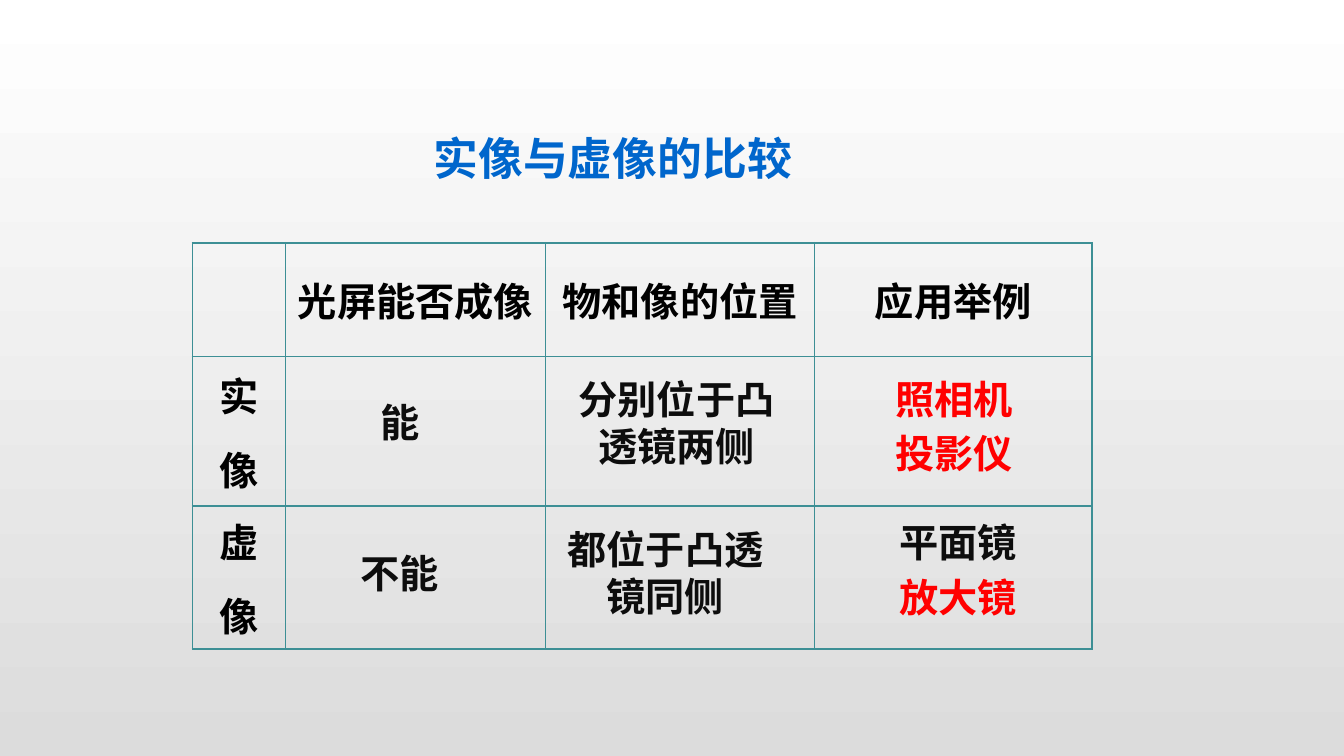
from dataclasses import dataclass

from lxml.etree import SubElement
from pptx import Presentation
from pptx.dml.color import RGBColor
from pptx.enum.text import MSO_ANCHOR, MSO_AUTO_SIZE, PP_ALIGN
from pptx.oxml.ns import qn
from pptx.slide import Slide
from pptx.table import _Cell
from pptx.text.text import TextFrame, _Paragraph
from pptx.util import Inches, Pt


@dataclass(frozen=True)
class Theme:
    font: str = "Times New Roman"
    title_size: float = 32
    text_size: float = 28
    title: str = "0066CC"
    heading: str = "000000"
    body: str = "0D0D0D"
    accent: str = "FF0000"
    border: str = "3D8F95"
    background: tuple[str, str] = ("FFFFFF", "DCDCDC")
    outer_width: float = 1.5
    inner_width: float = 1
    line_gap: float = 5.6
    label_gap: float = 12.5


THEME = Theme()


@dataclass(frozen=True)
class Line:
    text: str
    color: str = THEME.body


@dataclass(frozen=True)
class Answer:
    left: float
    top: float
    width: float
    height: float
    lines: tuple[Line, ...]


TITLE = "实像与虚像的比较"
COLUMN_WIDTHS = (0.92, 2.58, 2.67, 2.75)
ROW_HEIGHTS = (1.13, 1.48, 1.42)
TABLE_LEFT, TABLE_TOP = 1.91, 2.41
HEADINGS = {
    (0, 1): "光屏能否成像",
    (0, 2): "物和像的位置",
    (0, 3): "应用举例",
    (1, 0): "实像",
    (2, 0): "虚像",
}
ANSWERS = (
    Answer(3.09, 3.9, 1.75, 0.57, (Line("能"),)),
    Answer(2.8, 5.4, 2.33, 0.57, (Line("不能"),)),
    Answer(5.53, 3.67, 2.36, 1.03, (Line("分别位于凸透镜两侧"),)),
    Answer(5.53, 5.16, 2.14, 1.03, (Line("都位于凸透镜同侧"),)),
    Answer(8.13, 3.67, 2.67, 1.13,
           (Line("照相机", THEME.accent), Line("投影仪", THEME.accent))),
    Answer(8.13, 5.09, 2.75, 1.13,
           (Line("平面镜"), Line("放大镜", THEME.accent))),
)


def add_span(para: _Paragraph, line: Line, size: float) -> None:
    span = para.add_run()
    span.text = line.text
    span.font.name = THEME.font
    span.font.size = Pt(size)
    span.font.bold = True
    span.font.color.rgb = RGBColor.from_string(line.color)


def write_centred(frame: TextFrame, lines: tuple[Line, ...], gap: float) -> None:
    for index, line in enumerate(lines):
        para = frame.add_paragraph() if index else frame.paragraphs[0]
        para.alignment = PP_ALIGN.CENTER
        para.space_before = Pt(gap if index else 0)
        add_span(para, line, THEME.text_size)


def set_borders(cell: _Cell, outer_edges: dict[str, bool]) -> None:
    """Draw every edge of the cell, thicker where it lies on the table's rim."""
    properties = cell._tc.get_or_add_tcPr()
    for position, (tag, is_outer) in enumerate(outer_edges.items()):
        width = THEME.outer_width if is_outer else THEME.inner_width
        edge = SubElement(properties, qn(f"a:{tag}"), w=str(Pt(width)))
        fill = SubElement(edge, qn("a:solidFill"))
        SubElement(fill, qn("a:srgbClr"), val=THEME.border)
        properties.insert(position, edge)


def paint_background(page: Slide) -> None:
    fill = page.background.fill
    fill.gradient()
    fill.gradient_angle = 270
    for stop, color in zip(fill.gradient_stops, THEME.background):
        stop.color.rgb = RGBColor.from_string(color)


def add_title(page: Slide) -> None:
    title = page.shapes.title
    title.left, title.top = Inches(4.2), Inches(1.25)
    title.width, title.height = Inches(4.43), Inches(0.64)
    frame = title.text_frame
    frame.vertical_anchor = MSO_ANCHOR.TOP
    frame.auto_size = MSO_AUTO_SIZE.SHAPE_TO_FIT_TEXT
    para = frame.paragraphs[0]
    para.alignment = PP_ALIGN.LEFT
    add_span(para, Line(TITLE, THEME.title), THEME.title_size)


def add_comparison_table(page: Slide) -> None:
    row_count, column_count = len(ROW_HEIGHTS), len(COLUMN_WIDTHS)
    table = page.shapes.add_table(
        row_count, column_count, Inches(TABLE_LEFT), Inches(TABLE_TOP),
        Inches(sum(COLUMN_WIDTHS)), Inches(sum(ROW_HEIGHTS))).table
    table.first_row = table.horz_banding = False
    for column, width in zip(table.columns, COLUMN_WIDTHS):
        column.width = Inches(width)
    for row, height in zip(table.rows, ROW_HEIGHTS):
        row.height = Inches(height)
    for row in range(row_count):
        for column in range(column_count):
            cell = table.cell(row, column)
            cell.fill.background()
            cell.vertical_anchor = MSO_ANCHOR.MIDDLE
            set_borders(cell, {
                "lnL": column == 0,
                "lnR": column == column_count - 1,
                "lnT": row == 0,
                "lnB": row == row_count - 1,
            })
            heading = HEADINGS.get((row, column))
            if heading:
                parts = tuple(heading) if column == 0 else (heading,)
                lines = tuple(Line(part, THEME.heading) for part in parts)
                write_centred(cell.text_frame, lines, THEME.label_gap)


def add_answer(page: Slide, answer: Answer) -> None:
    box = page.shapes.add_textbox(
        Inches(answer.left), Inches(answer.top),
        Inches(answer.width), Inches(answer.height))
    frame = box.text_frame
    frame.word_wrap = True
    frame.auto_size = MSO_AUTO_SIZE.SHAPE_TO_FIT_TEXT
    write_centred(frame, answer.lines, THEME.line_gap)


def main() -> None:
    deck = Presentation()
    deck.slide_width, deck.slide_height = Inches(13.33), Inches(7.5)
    page = deck.slides.add_slide(deck.slide_layouts.get_by_name("Title Only"))
    paint_background(page)
    add_title(page)
    add_comparison_table(page)
    for answer in ANSWERS:
        add_answer(page, answer)
    deck.save("out.pptx")


if __name__ == "__main__":
    main()
